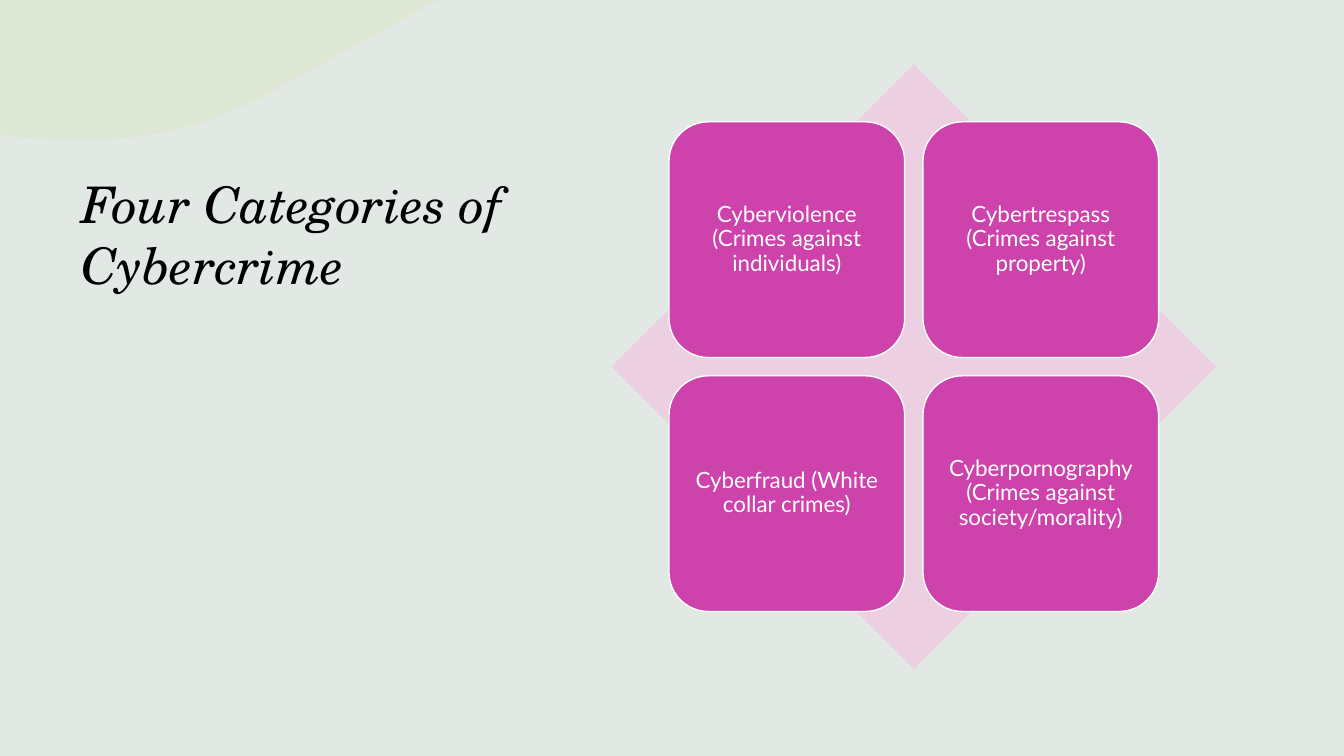
from dataclasses import dataclass

from lxml import etree
from pptx import Presentation
from pptx import util as u
from pptx.dml.color import RGBColor
from pptx.enum import shapes, text
from pptx.oxml.ns import qn

COLORS = {
    "background": "E2E8E3",
    "blob": "D1E7A4",
    "diamond": "EDCFE2",
    "card": "CD43AB",
    "light": "FFFFFF",
    "title": "000000",
}
CENTER_X, CENTER_Y = 23.03, 9.24
DIAMOND_SIZE = 15.24
CARD_SIZE, CARD_PITCH = 5.94, 6.4
CURVE_STEPS = 24

Point = tuple[float, float]


@dataclass
class Category:
    label: str
    column: int
    row: int


@dataclass
class Curve:
    start: Point
    control_1: Point
    control_2: Point
    end: Point


CATEGORIES = [
    Category("Cyberviolence (Crimes against individuals)", 0, 0),
    Category("Cybertrespass (Crimes against property)", 1, 0),
    Category("Cyberfraud (White collar crimes)", 0, 1),
    Category("Cyberpornography (Crimes against society/morality)", 1, 1),
]
BLOB_CORNERS = [(0, 3.38), (0, 0), (11.05, 0)]
BLOB_CURVES = [
    Curve((10.97, 0.03), (9.58, 0.81), (8.13, 1.6), (6.81, 2.34)),
    Curve((6.81, 2.34), (5.89, 2.84), (4.95, 3.18), (4.01, 3.35)),
    Curve((4.01, 3.35), (3.3, 3.48), (2.59, 3.56), (1.88, 3.53)),
    Curve((1.88, 3.53), (1.35, 3.53), (0.79, 3.48), (0.25, 3.43)),
]


def color(name: str) -> RGBColor:
    return RGBColor.from_string(COLORS[name])


def paint(shape, fill_name: str) -> None:
    shape.shadow.inherit = False
    shape.fill.solid()
    shape.fill.fore_color.rgb = color(fill_name)
    shape.line.fill.background()


def curve_points(curve: Curve) -> list[Point]:
    controls = (curve.start, curve.control_1, curve.control_2, curve.end)
    points = []
    for step in range(CURVE_STEPS + 1):
        t = step / CURVE_STEPS
        weights = ((1 - t) ** 3, 3 * t * (1 - t) ** 2, 3 * t**2 * (1 - t), t**3)
        x, y = (
            sum(weight * point[axis] for weight, point in zip(weights, controls))
            for axis in (0, 1)
        )
        points.append((x, y))
    return points


def draw_blob(slide) -> None:
    outline = BLOB_CORNERS + [
        point for curve in BLOB_CURVES for point in curve_points(curve)
    ]
    corners = [(u.Cm(x), u.Cm(y)) for x, y in outline]
    builder = slide.shapes.build_freeform(*corners[0])
    builder.add_line_segments(corners[1:], close=True)
    blob = builder.convert_to_shape()
    paint(blob, "blob")
    tint = blob.fill._xPr.find(qn("a:solidFill"))[0]
    etree.SubElement(tint, qn("a:alpha"), val="25000")


def draw_title(slide) -> None:
    title = slide.shapes.add_textbox(u.Cm(1.8), u.Cm(4.24), u.Cm(12.29), u.Cm(12.62))
    title.text_frame.word_wrap = True
    heading = title.text_frame.paragraphs[0]
    heading.text = "Four Categories of Cybercrime"
    heading.font.name = "TeX Gyre Schola"
    heading.font.size = u.Pt(36)
    heading.font.italic = True
    heading.font.color.rgb = color("title")


def draw_centered(slide, kind, center_x: float, center_y: float, size: float):
    return slide.shapes.add_shape(
        kind,
        u.Cm(center_x - size / 2),
        u.Cm(center_y - size / 2),
        u.Cm(size),
        u.Cm(size),
    )


def draw_category(slide, category: Category) -> None:
    card = draw_centered(
        slide,
        shapes.MSO_SHAPE.ROUNDED_RECTANGLE,
        CENTER_X + (category.column - 0.5) * CARD_PITCH,
        CENTER_Y + (category.row - 0.5) * CARD_PITCH,
        CARD_SIZE,
    )
    paint(card, "card")
    card.line.color.rgb = color("light")
    card.line.width = u.Pt(1)
    frame = card.text_frame
    frame.word_wrap = True
    frame.vertical_anchor = text.MSO_ANCHOR.MIDDLE
    frame.margin_left = frame.margin_right = u.Cm(0.18)
    frame.margin_top = frame.margin_bottom = u.Cm(0.18)
    label = frame.paragraphs[0]
    label.text = category.label
    label.alignment = text.PP_ALIGN.CENTER
    label.line_spacing = 0.9
    label.font.name = "Lato"
    label.font.size = u.Pt(16)
    label.font.color.rgb = color("light")


def main() -> None:
    deck = Presentation()
    deck.slide_width, deck.slide_height = u.Cm(33.87), u.Cm(19.05)
    slide = deck.slides.add_slide(deck.slide_layouts[6])
    slide.background.fill.solid()
    slide.background.fill.fore_color.rgb = color("background")
    draw_title(slide)
    draw_blob(slide)
    diamond = draw_centered(
        slide, shapes.MSO_SHAPE.DIAMOND, CENTER_X, CENTER_Y, DIAMOND_SIZE
    )
    paint(diamond, "diamond")
    for category in CATEGORIES:
        draw_category(slide, category)
    deck.save("out.pptx")


if __name__ == "__main__":
    main()
